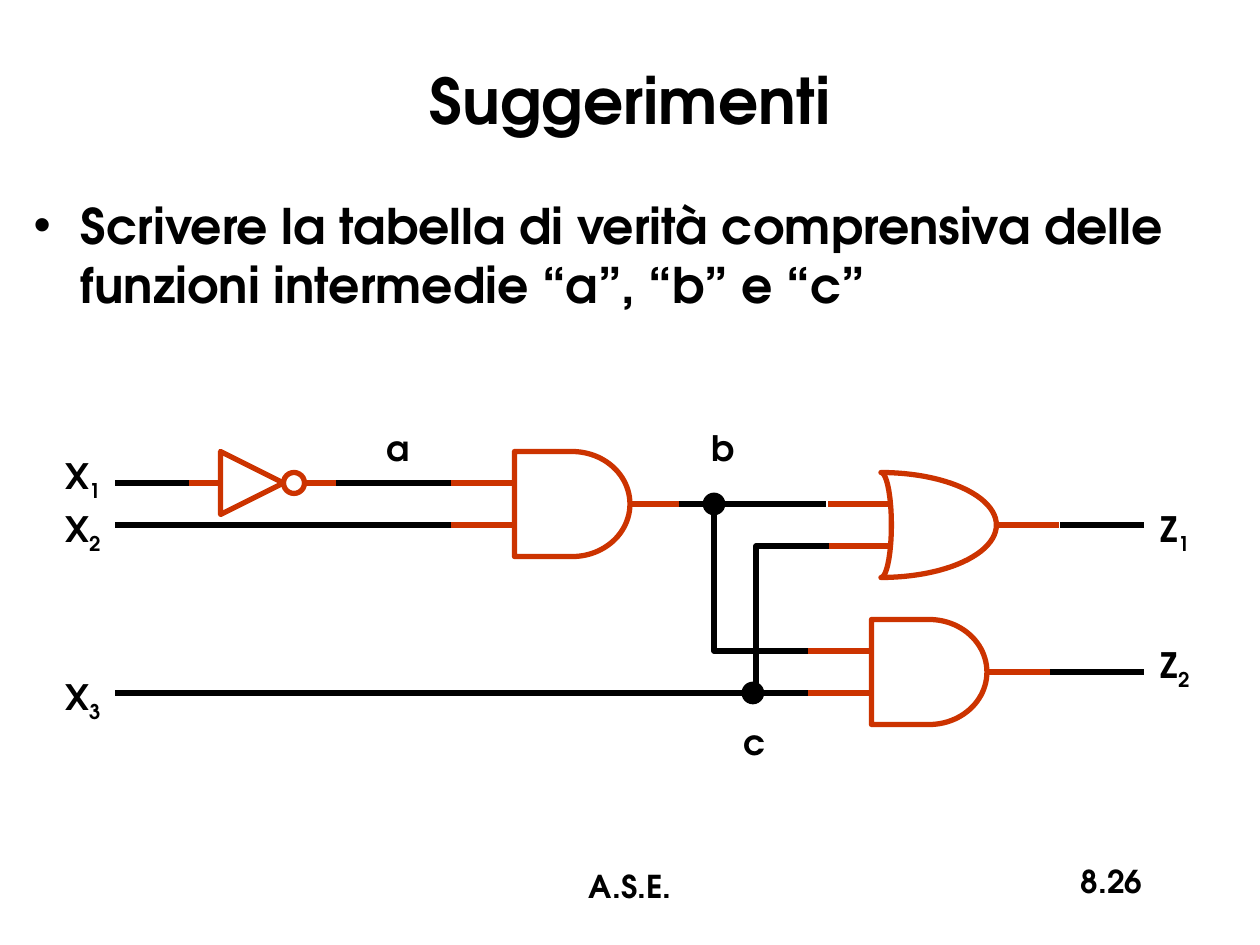
from dataclasses import dataclass
from math import cos, pi, sin

from lxml import etree
from pptx import Presentation
from pptx.dml.color import RGBColor
from pptx.enum.shapes import MSO_CONNECTOR, MSO_SHAPE
from pptx.enum.text import MSO_ANCHOR, MSO_AUTO_SIZE, PP_ALIGN
from pptx.oxml.ns import qn
from pptx.util import Cm, Pt

STRAIGHT = MSO_CONNECTOR.STRAIGHT
TRIANGLE, OVAL = MSO_SHAPE.ISOSCELES_TRIANGLE, MSO_SHAPE.OVAL
DELAY = MSO_SHAPE.FLOWCHART_DELAY
LEFT, CENTER, RIGHT = PP_ALIGN.LEFT, PP_ALIGN.CENTER, PP_ALIGN.RIGHT
TOP, MIDDLE = MSO_ANCHOR.TOP, MSO_ANCHOR.MIDDLE
RIGHT_SITE = 3

FONT = "TeX Gyre Adventor"
BLACK = RGBColor(0x00, 0x00, 0x00)
GATE_RED = RGBColor(0xCC, 0x33, 0x00)
GRID = Cm(2.54) / 12  # every position is counted in these steps


def steps(*counts):
    return [round(count * GRID) for count in counts]


@dataclass
class Box:
    left: float
    top: float
    width: float
    height: float

    def inner(self, x, y, width, height):
        """Box placed relative to this one's corner."""
        return Box(self.left + x, self.top + y, width, height)

    def point(self, x, y):
        return self.left + x, self.top + y

    def lengths(self):
        return steps(self.left, self.top, self.width, self.height)


def write(frame, text, size, align=LEFT, anchor=TOP, wrap=True, subscript=""):
    frame.word_wrap = wrap
    frame.auto_size = MSO_AUTO_SIZE.NONE
    frame.vertical_anchor = anchor
    para = frame.paragraphs[0]
    para.alignment = align
    for content in filter(None, (text, subscript)):
        span = para.add_run()
        span.text = content
        span.font.name = FONT
        span.font.size = Pt(size)
        span.font.bold = True
        span.font.color.rgb = BLACK
    if subscript:
        span._r.get_or_add_rPr().set("baseline", "-25000")


def write_box(page, box, text, size, **options):
    text_box = page.shapes.add_textbox(*box.lengths())
    write(text_box.text_frame, text, size, **options)


def fill_placeholder(placeholder, box, text, size, **options):
    placeholder.left, placeholder.top, placeholder.width, placeholder.height = box.lengths()
    write(placeholder.text_frame, text, size, **options)


def outline(shape, color, weight=3):
    shape.shadow.inherit = False
    shape.fill.background()
    shape.line.color.rgb = color
    shape.line.width = Pt(weight)


def add_outlined(page, kind, box, color=GATE_RED):
    shape = page.shapes.add_shape(kind, *box.lengths())
    outline(shape, color)
    return shape


def add_wire(page, start, end, color=BLACK):
    wire = page.shapes.add_connector(STRAIGHT, *steps(*start, *end))
    wire.line.color.rgb = color
    wire.line.width = Pt(3)
    etree.SubElement(wire._element.spPr, qn("a:effectLst"))
    return wire


def add_polyline(page, points, color=BLACK, close=False):
    first, *others = [steps(*point) for point in points]
    builder = page.shapes.build_freeform(*first)
    builder.add_line_segments(others, close=close)
    outline(builder.convert_to_shape(), color)


def add_junction(page, center_x, center_y):
    dot = add_outlined(page, OVAL, Box(center_x - 1, center_y - 1, 2, 2), BLACK)
    dot.fill.solid()
    dot.fill.fore_color.rgb = BLACK
    dot.line.width = Pt(1)


def add_inverter(page, box):
    middle = box.height / 2
    triangle = add_outlined(page, TRIANGLE, box.inner(3, 0, 6, box.height))
    triangle.rotation = 90
    add_outlined(page, OVAL, box.inner(9, middle - 1, 2, 2))
    for start, end in ((0, 3), (11, box.width)):
        add_wire(page, box.point(start, middle), box.point(end, middle), GATE_RED)


def add_gate_leads(page, box):
    """Two inputs and one output; returns the output."""
    middle = box.height / 2
    for y in (middle - 2, middle + 2):
        add_wire(page, box.point(0, y), box.point(6, y), GATE_RED)
    return add_wire(page, box.point(box.width - 6, middle),
                    box.point(box.width, middle), GATE_RED)


def add_and_gate(page, box):
    body = add_outlined(page, DELAY, box.inner(6, 0, box.width - 12, box.height))
    output = add_gate_leads(page, box)
    output.begin_connect(body, RIGHT_SITE)


def add_or_gate(page, box):
    middle = box.height / 2
    angles = [pi * step / 48 for step in range(49)]

    def arc(depth):
        return [box.point(5 + depth * sin(angle), middle - middle * cos(angle))
                for angle in angles]

    add_polyline(page, arc(box.width - 11) + arc(1)[-2:0:-1], GATE_RED, close=True)
    add_gate_leads(page, box)


def add_circuit(page, box):
    input_wires = [(6, 13, 6), (27, 38, 6), (6, 39, 10), (6, 72, 26)]
    output_wires = [(59.7, 73.7, 8), (96, 104, 10), (95, 104, 24)]
    branches = [[(63, 8), (63, 22), (72, 22)], [(67, 26), (67, 12), (74, 12)]]
    junctions = [(63, 8), (66.7, 26)]
    labels = [("X", "1", 0, 3), ("X", "2", 0, 8), ("X", "3", 0, 24),
              ("Z", "1", 104, 8), ("Z", "2", 104, 21),
              ("a", "", 30, 0), ("b", "", 61, 0), ("c", "", 64, 28)]

    def add_level_wires(wires):
        for start, end, y in wires:
            add_wire(page, box.point(start, y), box.point(end, y))

    add_level_wires(input_wires)
    add_inverter(page, box.inner(13, 3, 14, 6))
    add_or_gate(page, box.inner(73.9, 5, 22, 10))
    for x, y in ((38, 3), (72, 19)):
        add_and_gate(page, box.inner(x, y, 23, 10))
    add_level_wires(output_wires)
    for corners in branches:
        add_polyline(page, [box.point(*corner) for corner in corners])
    for center in junctions:
        add_junction(page, *box.point(*center))
    for name, index, x, y in labels:
        write_box(page, box.inner(x, y, 5.8, 5.2), name, 20, align=CENTER,
                  anchor=MIDDLE, wrap=False, subscript=index)


def add_footer(page, box):
    write_box(page, box.inner(0, 0.5, 38, 6), "A.S.E.", 18, align=CENTER)
    write_box(page, box.inner(44, 0, 25, 6), "8.26", 18, align=RIGHT)


def main():
    deck = Presentation()
    deck.slide_width, deck.slide_height = Cm(25.4), Cm(19.05)
    page = deck.slides.add_slide(deck.slide_layouts[1])
    fill_placeholder(page.shapes.title, Box(2, 2, 116, 15), "Suggerimenti", 36,
                     align=CENTER, anchor=MIDDLE)
    fill_placeholder(page.placeholders[1], Box(2, 18, 116, 62),
                     "Scrivere la tabella di verità comprensiva delle "
                     "funzioni intermedie “a”, “b” e “c”", 28)
    add_circuit(page, Box(5, 40, 110, 34))
    add_footer(page, Box(41, 81.5, 69, 6.5))
    deck.save("out.pptx")


if __name__ == "__main__":
    main()
